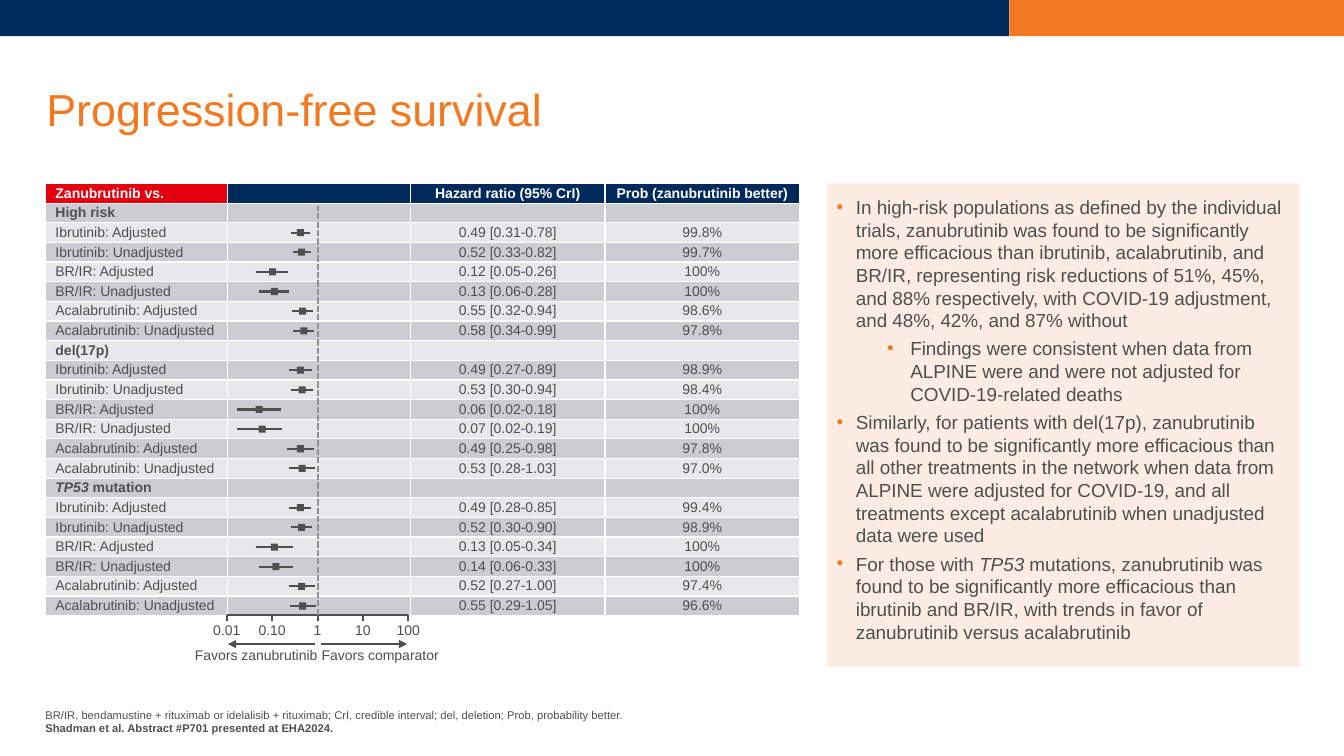
from dataclasses import dataclass
from math import log10

from lxml.etree import SubElement
from pptx import Presentation
from pptx.dml.color import RGBColor as Color
from pptx.enum.dml import MSO_LINE_DASH_STYLE as Dash
from pptx.enum.shapes import MSO_CONNECTOR_TYPE as Connector
from pptx.enum.shapes import MSO_SHAPE as Shape
from pptx.enum.text import MSO_VERTICAL_ANCHOR as Anchor
from pptx.enum.text import PP_PARAGRAPH_ALIGNMENT as Align
from pptx.oxml.ns import qn
from pptx.util import Inches, Pt


@dataclass(frozen=True)
class Theme:
    font: str = "Arial"
    navy: str = "002A5C"
    orange: str = "F37920"
    red: str = "E3000F"
    white: str = "FFFFFF"
    ink: str = "4E4F4E"
    dash: str = "929292"
    peach: str = "FDECE3"
    bands: tuple = ("CCCDD2", "E7E8EA")
    title: float = 32
    body: float = 13.5
    small: float = 10
    note: float = 8


BOLD = {"bold": True}
ITALIC = {"italic": True}


def set_attributes(target, values):
    for name, value in values.items():
        setattr(target, name, value)


class SlideBuilder:
    def __init__(self, slide, theme):
        self.slide = slide
        self.theme = theme

    def add_runs(self, paragraph, content, size, color=None, **formats):
        runs = [(content, {})] if isinstance(content, str) else content
        for text, extra in runs:
            run = paragraph.add_run()
            run.text = text
            set_attributes(run.font, {"name": self.theme.font, "size": Pt(size), **formats, **extra})
            run.font.color.rgb = Color.from_string(color or self.theme.ink)

    def frame(self, text_frame, margins, anchor=Anchor.TOP, wrap=True):
        sides = ("margin_left", "margin_top", "margin_right", "margin_bottom")
        set_attributes(text_frame, dict(zip(sides, map(Inches, margins))))
        set_attributes(text_frame, {"vertical_anchor": anchor, "word_wrap": wrap})
        return text_frame

    def text(self, box, content, size, color=None, margins=(0, 0, 0, 0), anchor=Anchor.TOP,
             align=Align.LEFT, wrap=True, spacing=None):
        shape = self.slide.shapes.add_textbox(*map(Inches, box))
        text_frame = self.frame(shape.text_frame, margins, anchor, wrap)
        for index, line in enumerate(content):
            paragraph = text_frame.add_paragraph() if index else text_frame.paragraphs[0]
            set_attributes(paragraph, {"alignment": align, "line_spacing": spacing})
            self.add_runs(paragraph, line, size, color)

    def label(self, center, top, content):
        width = 1.5
        self.text((center - width / 2, top, width, 0.27), [content], self.theme.small,
                  margins=(0.1, 0.05, 0.1, 0.05), align=Align.CENTER, wrap=False)

    def rectangle(self, box, color):
        shape = self.slide.shapes.add_shape(Shape.RECTANGLE, *map(Inches, box))
        shape.shadow.inherit = False
        shape.fill.solid()
        shape.fill.fore_color.rgb = Color.from_string(color)
        shape.line.fill.background()
        return shape

    def line(self, start, end, color=None, dash=None, arrow=False):
        connector = self.slide.shapes.add_connector(
            Connector.STRAIGHT, *map(Inches, (*start, *end)))
        connector.line.color.rgb = Color.from_string(color or self.theme.ink)
        set_attributes(connector.line, {"width": Pt(1.5), "dash_style": dash})
        properties = connector._element.spPr
        if arrow:
            SubElement(properties.find(qn("a:ln")), qn("a:tailEnd"), type="triangle")
        SubElement(properties, qn("a:effectLst"))

    def bullets(self, box, color, items):
        text_frame = self.frame(self.rectangle(box, color).text_frame, (0.1, 0.12, 0.1, 0.05))
        for index, (level, content) in enumerate(items):
            paragraph = text_frame.add_paragraph() if index else text_frame.paragraphs[0]
            left, hanging = ((0.19, 0.19), (0.73, 0.23))[level]
            properties = paragraph._p.get_or_add_pPr()
            properties.set("marL", str(Inches(left)))
            properties.set("indent", str(-Inches(hanging)))
            bullet_color = SubElement(properties, qn("a:buClr"))
            SubElement(bullet_color, qn("a:srgbClr"), val=self.theme.orange)
            SubElement(properties, qn("a:buFont"), typeface=self.theme.font)
            SubElement(properties, qn("a:buChar"), char="•")
            set_attributes(paragraph, {"level": level, "alignment": Align.LEFT, "space_after": Pt(4)})
            self.add_runs(paragraph, content, self.theme.body)

    def cell(self, cell, content, fill, color, align, bold):
        cell.fill.solid()
        cell.fill.fore_color.rgb = Color.from_string(fill)
        set_attributes(cell, {"margin_left": Inches(0.1), "margin_right": Inches(0.1),
                              "margin_top": 0, "margin_bottom": 0,
                              "vertical_anchor": Anchor.MIDDLE})
        paragraph = cell.text_frame.paragraphs[0]
        paragraph.alignment = align
        if content:
            self.add_runs(paragraph, content, self.theme.small, color, bold=bold)
        else:
            SubElement(paragraph._p, qn("a:endParaRPr"), sz=str(self.theme.small * 100))

    def table(self, left, top, widths, row_height, rows):
        table = self.slide.shapes.add_table(
            len(rows), len(widths), Inches(left), Inches(top),
            Inches(sum(widths)), Inches(row_height * len(rows))).table
        for column, width in zip(table.columns, widths):
            column.width = Inches(width)
        for index, row in enumerate(rows):
            table.rows[index].height = Inches(row_height)
            for column, content in enumerate(row):
                fill = self.theme.bands[(index + 1) % 2]
                if index == 0:
                    fill = self.theme.navy if column else self.theme.red
                self.cell(table.cell(index, column), content, fill,
                          self.theme.ink if index else self.theme.white,
                          Align.CENTER if column else Align.LEFT,
                          index == 0 or not row[-1])

    def estimate(self, y, hazard, low, high, scale):
        side = 0.07
        self.line((scale(low), y), (scale(high), y))
        self.rectangle((scale(hazard) - side / 2, y - side / 2, side, side), self.theme.ink)


COMPARISONS = [f"{drug}: {kind}" for drug in ("Ibrutinib", "BR/IR", "Acalabrutinib")
               for kind in ("Adjusted", "Unadjusted")]
GROUPS = [
    ("High risk", [
        ("0.49", "0.31", "0.78", "99.8%"), ("0.52", "0.33", "0.82", "99.7%"),
        ("0.12", "0.05", "0.26", "100%"), ("0.13", "0.06", "0.28", "100%"),
        ("0.55", "0.32", "0.94", "98.6%"), ("0.58", "0.34", "0.99", "97.8%")]),
    ("del(17p)", [
        ("0.49", "0.27", "0.89", "98.9%"), ("0.53", "0.30", "0.94", "98.4%"),
        ("0.06", "0.02", "0.18", "100%"), ("0.07", "0.02", "0.19", "100%"),
        ("0.49", "0.25", "0.98", "97.8%"), ("0.53", "0.28", "1.03", "97.0%")]),
    ([("TP53", ITALIC), (" mutation", {})], [
        ("0.49", "0.28", "0.85", "99.4%"), ("0.52", "0.30", "0.90", "98.9%"),
        ("0.13", "0.05", "0.34", "100%"), ("0.14", "0.06", "0.33", "100%"),
        ("0.52", "0.27", "1.00", "97.4%"), ("0.55", "0.29", "1.05", "96.6%")]),
]
FINDINGS = [
    (0, "In high-risk populations as defined by the individual trials, zanubrutinib was found to be significantly more efficacious than ibrutinib, acalabrutinib, and BR/IR, representing risk reductions of 51%, 45%, and 88% respectively, with COVID-19 adjustment, and 48%, 42%, and 87% without"),
    (1, "Findings were consistent when data from ALPINE were and were not adjusted for COVID-19-related deaths"),
    (0, "Similarly, for patients with del(17p), zanubrutinib was found to be significantly more efficacious than all other treatments in the network when data from ALPINE were adjusted for COVID-19, and all treatments except acalabrutinib when unadjusted data were used"),
    (0, [("For those with ", {}), ("TP53", ITALIC), (" mutations, zanubrutinib was found to be significantly more efficacious than ibrutinib and BR/IR, with trends in favor of zanubrutinib versus acalabrutinib", {})]),
]
FOOTNOTES = [
    "BR/IR, bendamustine + rituximab or idelalisib + rituximab; CrI, credible interval; del, deletion; Prob, probability better.",
    [("Shadman et al. Abstract #P701 presented at EHA2024.", BOLD)],
]


def add_forest_plot(builder):
    top, row_height = 1.82, 0.195
    axis_y, axis_center, decade = 6.1, 3.15, 0.45
    rows = [("Zanubrutinib vs.", "", "Hazard ratio (95% CrI)", "Prob (zanubrutinib better)")]
    estimates = []
    for heading, results in GROUPS:
        rows.append((heading, "", "", ""))
        for comparison, (hazard, low, high, probability) in zip(COMPARISONS, results):
            estimates.append((top + row_height * (len(rows) + 0.5), *map(float, (hazard, low, high))))
            rows.append((comparison, "", f"{hazard} [{low}-{high}]", probability))
    builder.table(0.45, top, (1.81, 1.81, 1.93, 1.93), row_height, rows)

    builder.line((axis_center - 2 * decade, axis_y), (axis_center + 2 * decade, axis_y))
    for step, tick in enumerate(("0.01", "0.10", "1", "10", "100"), -2):
        x = axis_center + step * decade
        builder.line((x, axis_y), (x, axis_y + 0.06))
        builder.label(x, 6.12, tick)
    for side, center, caption in ((-1, 2.54, "Favors zanubrutinib"), (1, 3.77, "Favors comparator")):
        builder.line((axis_center + side * 0.03, 6.39), (axis_center + side * 0.89, 6.39), arrow=True)
        builder.label(center, 6.36, caption)
    builder.line((axis_center, axis_y), (axis_center, 2.04), builder.theme.dash, Dash.SQUARE_DOT)
    for y, *values in estimates:
        builder.estimate(y, *values, lambda value: axis_center - 0.03 + decade * log10(value))


def main():
    presentation = Presentation()
    set_attributes(presentation, {"slide_width": Inches(13.33), "slide_height": Inches(7.5)})
    theme = Theme()
    builder = SlideBuilder(presentation.slides.add_slide(presentation.slide_layouts[6]), theme)
    builder.rectangle((0, 0, 10.01, 0.36), theme.navy)
    builder.rectangle((10.01, 0, 3.32, 0.36), theme.orange)
    builder.text((0.46, 0.63, 12.43, 0.97), ["Progression-free survival"], theme.title,
                 theme.orange, anchor=Anchor.MIDDLE, spacing=0.9)
    builder.text((0.45, 6.87, 9.33, 0.42), FOOTNOTES, theme.note, anchor=Anchor.BOTTOM)
    builder.bullets((8.2, 1.82, 4.69, 4.8), theme.peach, FINDINGS)
    add_forest_plot(builder)
    presentation.save("out.pptx")


if __name__ == "__main__":
    main()
